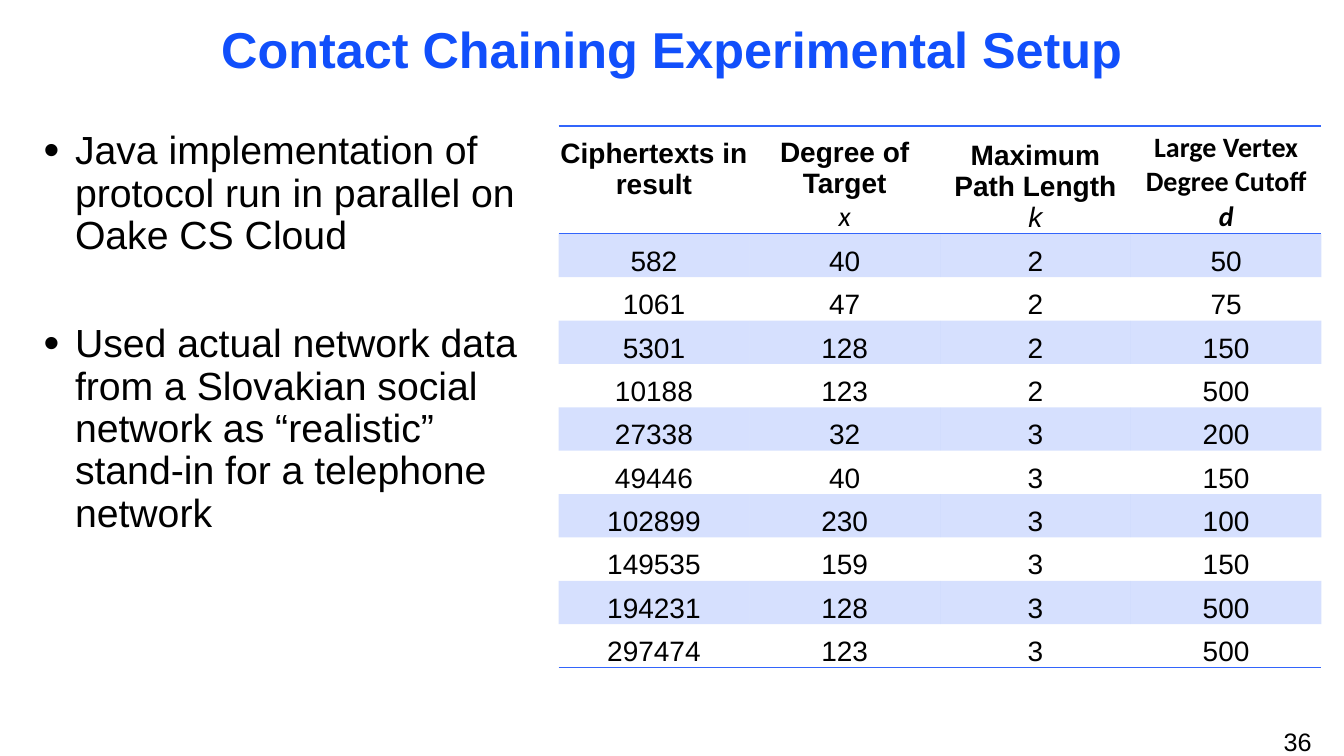
from pptx import Presentation
from pptx import util as u
from pptx.dml import color
from pptx.enum import text
from pptx.oxml import parse_xml
from pptx.oxml.ns import nsdecls

Pt = u.Pt
BLUE, BLACK = "3365FB", "000000"


def style(item, size, hue=BLACK, face="Arial", bold=False, italic=False):
    item.font.size = Pt(size)
    item.font.name = face
    item.font.bold = bold
    item.font.italic = italic
    item.font.color.rgb = color.RGBColor.from_string(hue)


def add_xml(parent, index, tag, attributes, content=""):
    parent.insert(index, parse_xml(
        f'<a:{tag} {nsdecls("a")} {attributes}>{content}</a:{tag}>'))


deck = Presentation()
deck.slide_width, deck.slide_height = Pt(960), Pt(540)
slide = deck.slides.add_slide(deck.slide_layouts[6])

number = slide.shapes.add_textbox(Pt(872), Pt(515), Pt(72), Pt(29)).text_frame
number.word_wrap = True
number.text = "36"
number.paragraphs[0].alignment = text.PP_ALIGN.RIGHT
style(number.paragraphs[0], 18)

title = slide.shapes.add_textbox(Pt(0), Pt(12), Pt(960), Pt(48)).text_frame
title.word_wrap = True
title.vertical_anchor = text.MSO_ANCHOR.BOTTOM
title.text = "Contact Chaining Experimental Setup"
title.paragraphs[0].alignment = text.PP_ALIGN.CENTER
title.paragraphs[0].line_spacing = 0.9
style(title.paragraphs[0], 36, "114FFB", bold=True)

setup = slide.shapes.add_textbox(Pt(24), Pt(90), Pt(356), Pt(431)).text_frame
setup.word_wrap = True
setup.text = (
    "Java implementation of protocol run in parallel on Oake CS Cloud\n"
    "Used actual network data from a Slovakian social network as “realistic” "
    "stand-in for a telephone network")
for point, gap in zip(setup.paragraphs, (0, 47)):
    point.line_spacing = 0.9
    point.space_before = Pt(gap)
    style(point, 28)
    properties = point._p.get_or_add_pPr()
    properties.set("marL", str(Pt(22.5)))
    properties.set("indent", str(Pt(-22.5)))
    bullet_at = len(properties.xpath("a:lnSpc | a:spcBef"))
    add_xml(properties, bullet_at, "buClr", "", f'<a:srgbClr val="{BLACK}"/>')
    add_xml(properties, bullet_at + 1, "buSzPct", 'val="115000"')
    add_xml(properties, bullet_at + 2, "buFont", 'typeface="Arial"')
    add_xml(properties, bullet_at + 3, "buChar", 'char="•"')

headings = [
    ("Ciphertexts in result", "Arial", "", "Arial", False),
    ("Degree of Target", "Arial", "x", "Calibri", False),
    ("Maximum Path Length", "Arial", "k", "Arial", False),
    ("Large Vertex Degree Cutoff", "Calibri", "d", "Calibri", True),
]
runs = [
    (582, 40, 2, 50),
    (1061, 47, 2, 75),
    (5301, 128, 2, 150),
    (10188, 123, 2, 500),
    (27338, 32, 3, 200),
    (49446, 40, 3, 150),
    (102899, 230, 3, 100),
    (149535, 159, 3, 150),
    (194231, 128, 3, 500),
    (297474, 123, 3, 500),
]
results = slide.shapes.add_table(
    len(runs) + 1, len(headings), Pt(399), Pt(90), Pt(545), Pt(387)).table
results.first_row = results.horz_banding = False
results._tbl.xpath(".//a:tableStyleId")[0].text = "{2D5ABB26-0587-4C30-8999-92F81FD0307C}"
for column in results.columns:
    column.width = Pt(136.25)
for index, row in enumerate(results.rows):
    row.height = Pt(31 if index else 77)
    for position, cell in enumerate(row.cells):
        cell.margin_left = cell.margin_right = cell.margin_top = Pt(0.75)
        cell.margin_bottom = Pt(0)
        cell.vertical_anchor = text.MSO_ANCHOR.BOTTOM
        if index:
            cell.text = str(runs[index - 1][position])
            style(cell.text_frame.paragraphs[0], 20)
        else:
            label, label_face, symbol, symbol_face, symbol_bold = headings[position]
            cell.text = label
            style(cell.text_frame.paragraphs[0], 20, face=label_face, bold=True)
            if symbol:
                variable = cell.text_frame.add_paragraph()
                variable.text = symbol
                style(variable, 20, face=symbol_face, bold=symbol_bold, italic=True)
            else:
                cell.margin_bottom = Pt(24)
        for paragraph in cell.text_frame.paragraphs:
            paragraph.alignment = text.PP_ALIGN.CENTER

        if index % 2:
            cell.fill.solid()
            cell.fill.fore_color.rgb = color.RGBColor.from_string(BLUE)
            shade = cell._tc.tcPr.xpath("a:solidFill/a:srgbClr")[0]
            add_xml(shade, 0, "alpha", 'val="20000"')
        else:
            cell.fill.background()
        edges = {0: ("lnT", "lnB"), len(runs): ("lnB",)}.get(index, ())
        for order, edge in enumerate(edges):
            add_xml(cell._tc.tcPr, order, edge, f'w="{Pt(1)}"',
                    f'<a:solidFill><a:srgbClr val="{BLUE}"/></a:solidFill>')

deck.save("out.pptx")
